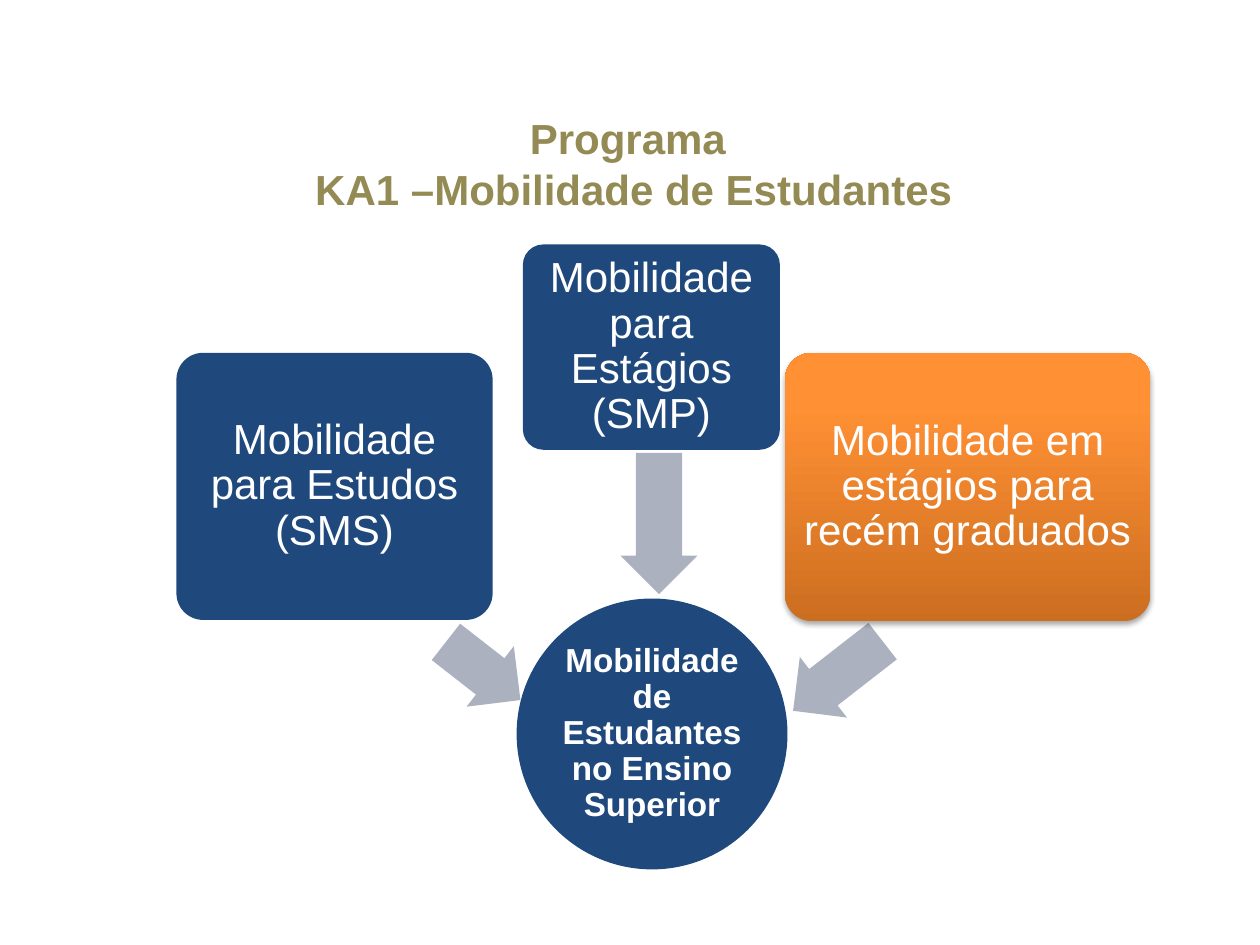
from copy import deepcopy
from dataclasses import dataclass

from pptx import Presentation
from pptx.dml.color import RGBColor
from pptx.enum.shapes import MSO_SHAPE
from pptx.enum.text import MSO_ANCHOR, PP_ALIGN
from pptx.oxml import parse_xml
from pptx.oxml.ns import nsdecls, qn
from pptx.shapes.autoshape import Shape
from pptx.slide import Slide
from pptx.util import Inches, Pt

ELLIPSE = MSO_SHAPE.OVAL
ROUNDED = MSO_SHAPE.ROUNDED_RECTANGLE
LEFT_ARROW = MSO_SHAPE.LEFT_ARROW
CENTER = PP_ALIGN.CENTER
MIDDLE = MSO_ANCHOR.MIDDLE

BLUE = RGBColor(0x1F, 0x49, 0x7D)
GREY = RGBColor(0xAC, 0xB1, 0xBF)
OLIVE = RGBColor(0x94, 0x8A, 0x54)
WHITE = RGBColor(0xFF, 0xFF, 0xFF)
ORANGE_STOPS = (
    (0.0, RGBColor(0xCC, 0x6E, 0x20)),
    (0.8, RGBColor(0xFF, 0x90, 0x34)),
    (1.0, RGBColor(0xFF, 0x91, 0x36)),
)
FONT = "Arial"


@dataclass(frozen=True)
class Node:
    text: str
    left: float
    top: float
    width: float
    height: float
    kind: MSO_SHAPE = ROUNDED
    size: int = 24
    bold: bool = False
    inset: float = 0.05
    highlighted: bool = False


@dataclass(frozen=True)
class Arrow:
    left: float
    top: float
    width: float
    rotation: float
    height: float = 0.61


HUB = Node("Mobilidade de Estudantes no Ensino Superior", 4.1, 4.75, 2.15, 2.15,
           kind=ELLIPSE, size=19, bold=True, inset=0.01)
BRANCHES = (
    Node("Mobilidade para Estudos (SMS)", 1.4, 2.8, 2.51, 2.12),
    Node("Mobilidade para Estágios (SMP)", 4.15, 1.94, 2.04, 1.63),
    Node("Mobilidade em estágios para recém graduados", 6.23, 2.8, 2.9, 2.13,
         highlighted=True),
)
ARROWS = (
    Arrow(3.46, 5.02, 0.75, 218),
    Arrow(4.67, 3.85, 1.12, 270),
    Arrow(6.2, 5.06, 0.9, 322.1),
)


def add_plain_shape(slide: Slide, kind: MSO_SHAPE, item: Node | Arrow,
                    color: RGBColor) -> Shape:
    shape = slide.shapes.add_shape(kind, Inches(item.left), Inches(item.top),
                                   Inches(item.width), Inches(item.height))
    shape.shadow.inherit = False
    shape.fill.solid()
    shape.fill.fore_color.rgb = color
    shape.line.fill.background()
    return shape


def highlight(shape: Shape) -> None:
    shape.fill.gradient()
    shape.fill.gradient_angle = 90
    properties = shape.element.spPr
    stop_list = properties.find(".//" + qn("a:gsLst"))
    stop_list.append(deepcopy(stop_list[-1]))
    for stop, (position, color) in zip(shape.fill.gradient_stops, ORANGE_STOPS):
        stop.position = position
        stop.color.rgb = color
    properties.find(qn("a:effectLst")).append(parse_xml(
        f'<a:outerShdw {nsdecls("a")} blurRad="{Pt(3.1)}" dist="{Pt(1.8)}" '
        'dir="5400000" rotWithShape="0"><a:srgbClr val="000000">'
        '<a:alpha val="35000"/></a:srgbClr></a:outerShdw>'))


def add_node(slide: Slide, node: Node) -> None:
    shape = add_plain_shape(slide, node.kind, node, BLUE)
    if node.kind == ROUNDED:
        shape.adjustments[0] = 0.1
    if node.highlighted:
        highlight(shape)
    frame = shape.text_frame
    frame.word_wrap = True
    frame.vertical_anchor = MIDDLE
    frame.margin_left = frame.margin_right = Inches(node.inset)
    frame.margin_top = frame.margin_bottom = Inches(node.inset)
    paragraph = frame.paragraphs[0]
    paragraph.text = node.text
    paragraph.alignment = CENTER
    paragraph.line_spacing = 0.9
    paragraph.font.name = FONT
    paragraph.font.size = Pt(node.size)
    paragraph.font.bold = node.bold
    paragraph.font.color.rgb = WHITE


def add_arrow(slide: Slide, arrow: Arrow) -> None:
    shape = add_plain_shape(slide, LEFT_ARROW, arrow, GREY)
    shape.adjustments[0] = 0.6
    shape.adjustments[1] = 0.5
    shape.rotation = arrow.rotation


def set_title(slide: Slide) -> None:
    title = slide.shapes.title
    title.left, title.top = Inches(1.22), Inches(0.84)
    title.width, title.height = Inches(7.62), Inches(1.32)
    frame = title.text_frame
    frame.word_wrap = True
    frame.vertical_anchor = MIDDLE
    frame.margin_bottom = Inches(0.46)
    paragraph = frame.paragraphs[0]
    paragraph.text = "Programa \vKA1 –Mobilidade de Estudantes"
    paragraph.alignment = CENTER
    paragraph.font.name = FONT
    paragraph.font.size = Pt(24)
    paragraph.font.bold = True
    paragraph.font.color.rgb = OLIVE


def main() -> None:
    presentation = Presentation()
    presentation.slide_width = Inches(10)
    presentation.slide_height = Inches(7.5)
    slide = presentation.slides.add_slide(presentation.slide_layouts[5])
    set_title(slide)
    add_node(slide, HUB)
    for arrow, branch in zip(ARROWS, BRANCHES):
        add_arrow(slide, arrow)
        add_node(slide, branch)
    presentation.save("out.pptx")


if __name__ == "__main__":
    main()
